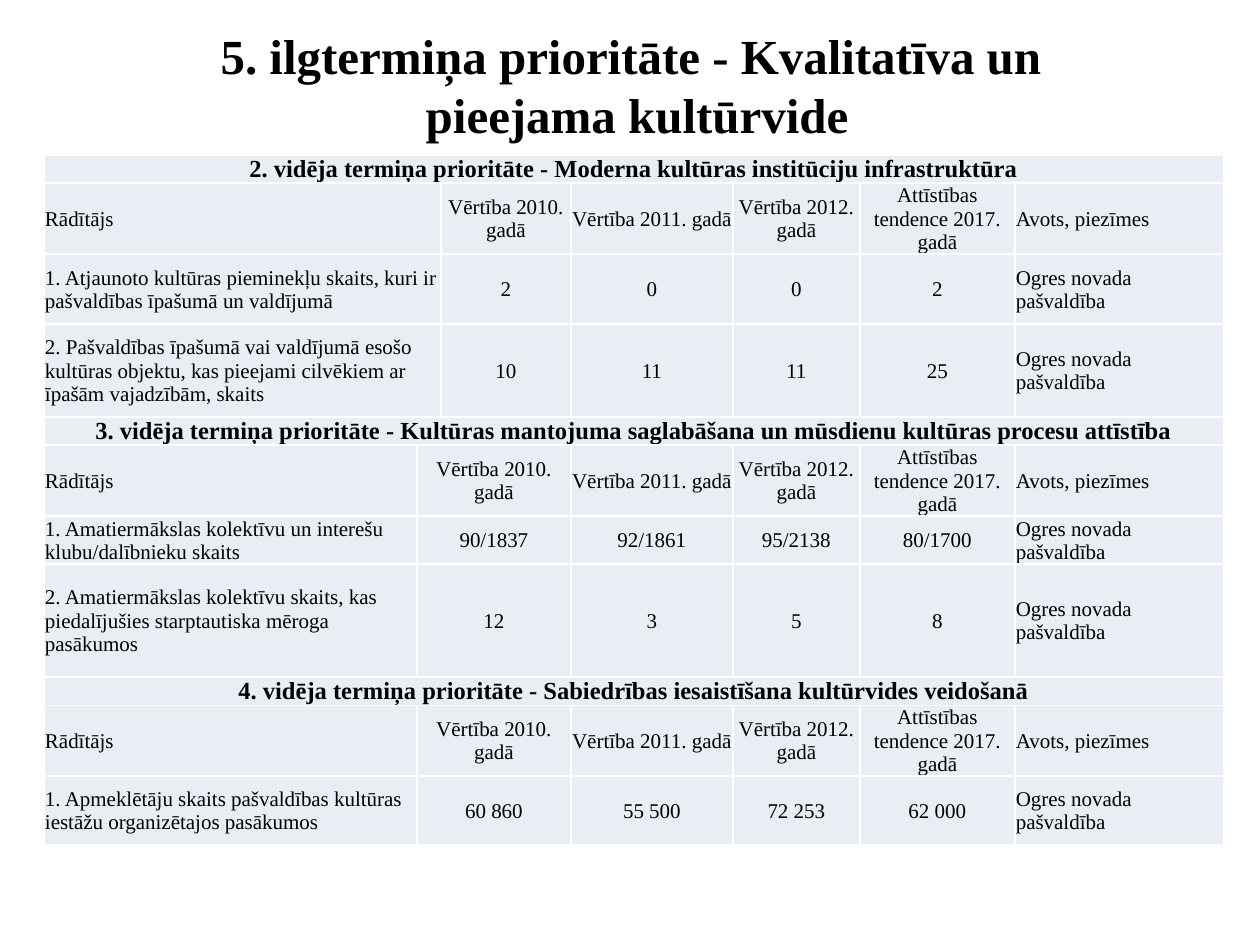
from lxml import etree
from pptx import Presentation
from pptx import util as u
from pptx.dml.color import RGBColor
from pptx.enum import text
from pptx.oxml.ns import qn

PX = 914400 // 126
FONT = "Times New Roman"
BLACK = RGBColor(0, 0, 0)
WHITE = RGBColor(255, 255, 255)
PALE = RGBColor(0xE9, 0xED, 0xF4)

TITLE = "5. ilgtermiņa prioritāte - Kvalitatīva un\v pieejama kultūrvide"
HEADER = ("Rādītājs", "Vērtība 2010. gadā", "Vērtība 2011. gadā",
          "Vērtība 2012. gadā", "Attīstības tendence 2017. gadā", "Avots, piezīmes")
SOURCE = "Ogres novada pašvaldība"
SECTIONS = [
    ("2. vidēja termiņa prioritāte - Moderna kultūras institūciju infrastruktūra", 2, [
        ("1. Atjaunoto kultūras pieminekļu skaits, kuri ir pašvaldības īpašumā un valdījumā",
         "2", "0", "0", "2", SOURCE),
        ("2. Pašvaldības īpašumā vai valdījumā esošo kultūras objektu, kas pieejami "
         "cilvēkiem ar īpašām vajadzībām, skaits", "10", "11", "11", "25", SOURCE),
    ]),
    ("3. vidēja termiņa prioritāte - Kultūras mantojuma saglabāšana un mūsdienu "
     "kultūras procesu attīstība", 1, [
        ("1. Amatiermākslas kolektīvu un interešu klubu/dalībnieku skaits",
         "90/1837", "92/1861", "95/2138", "80/1700", SOURCE),
        ("2. Amatiermākslas kolektīvu skaits, kas piedalījušies starptautiska mēroga "
         "pasākumos", "12", "3", "5", "8", SOURCE),
    ]),
    ("4. vidēja termiņa prioritāte - Sabiedrības iesaistīšana kultūrvides veidošanā", 1, [
        ("1. Apmeklētāju skaits pašvaldības kultūras iestāžu organizētajos pasākumos",
         "60 860", "55 500", "72 253", "62 000", SOURCE),
    ]),
]
COLS = [373, 24, 130, 162, 127, 155, 209]
ROWS = [28, 71, 70, 93, 28, 71, 48, 113, 28, 71, 69]
LEFT, TOP = 44, 155


def px(n):
    return u.Emu(n * PX)


def format_text(tf, size, bold, align):
    for p in tf.paragraphs:
        p.alignment = align
        for r in p.runs:
            f = r.font
            f.name, f.size, f.bold = FONT, u.Pt(size), bold
            f.color.rgb = BLACK


def format_cell(cell):
    tcPr = cell._tc.get_or_add_tcPr()
    for side in ("a:lnL", "a:lnR", "a:lnT", "a:lnB"):
        ln = etree.SubElement(tcPr, qn(side), w=str(u.Pt(1)))
        fill = etree.SubElement(ln, qn("a:solidFill"))
        etree.SubElement(fill, qn("a:srgbClr"), val=str(WHITE))
    cell.fill.solid()
    cell.fill.fore_color.rgb = PALE
    cell.margin_left = cell.margin_right = cell.margin_top = px(1)
    cell.margin_bottom = 0
    cell.vertical_anchor = text.MSO_ANCHOR.MIDDLE


def write(cell, value, size, bold, align):
    cell.text_frame.text = value
    format_text(cell.text_frame, size, bold, align)


def add_title(s):
    sp = s.shapes.title
    sp.left, sp.top, sp.width, sp.height = px(64), px(16), px(1134), px(137)
    tf = sp.text_frame
    tf.text = TITLE
    tf.vertical_anchor = text.MSO_ANCHOR.MIDDLE
    format_text(tf, 28, True, text.PP_ALIGN.CENTER)


def add_indicators(s):
    tbl = s.shapes.add_table(len(ROWS), len(COLS), px(LEFT), px(TOP),
                             px(sum(COLS)), px(sum(ROWS))).table
    tbl.first_row = tbl.horz_banding = False
    for col, width in zip(tbl.columns, COLS):
        col.width = px(width)
    for row, height in zip(tbl.rows, ROWS):
        row.height = px(height)
    for cell in tbl.iter_cells():
        format_cell(cell)

    i = 0
    for heading, label_span, records in SECTIONS:
        tbl.cell(i, 0).merge(tbl.cell(i, len(COLS) - 1))
        write(tbl.cell(i, 0), heading, 14, True, text.PP_ALIGN.CENTER)
        starts = [0, label_span, 3, 4, 5, 6]
        for i, values in enumerate([HEADER, *records], i + 1):
            merge_from = 0 if label_span == 2 else 1
            tbl.cell(i, merge_from).merge(tbl.cell(i, merge_from + 1))
            for j, value in zip(starts, values):
                align = text.PP_ALIGN.LEFT if j in (0, 6) else text.PP_ALIGN.CENTER
                write(tbl.cell(i, j), value, 12, False, align)
        i += 1


def main():
    prs = Presentation()
    prs.slide_width, prs.slide_height = px(1260), px(945)
    s = prs.slides.add_slide(prs.slide_layouts[5])
    add_title(s)
    add_indicators(s)
    prs.save("out.pptx")


if __name__ == "__main__":
    main()
